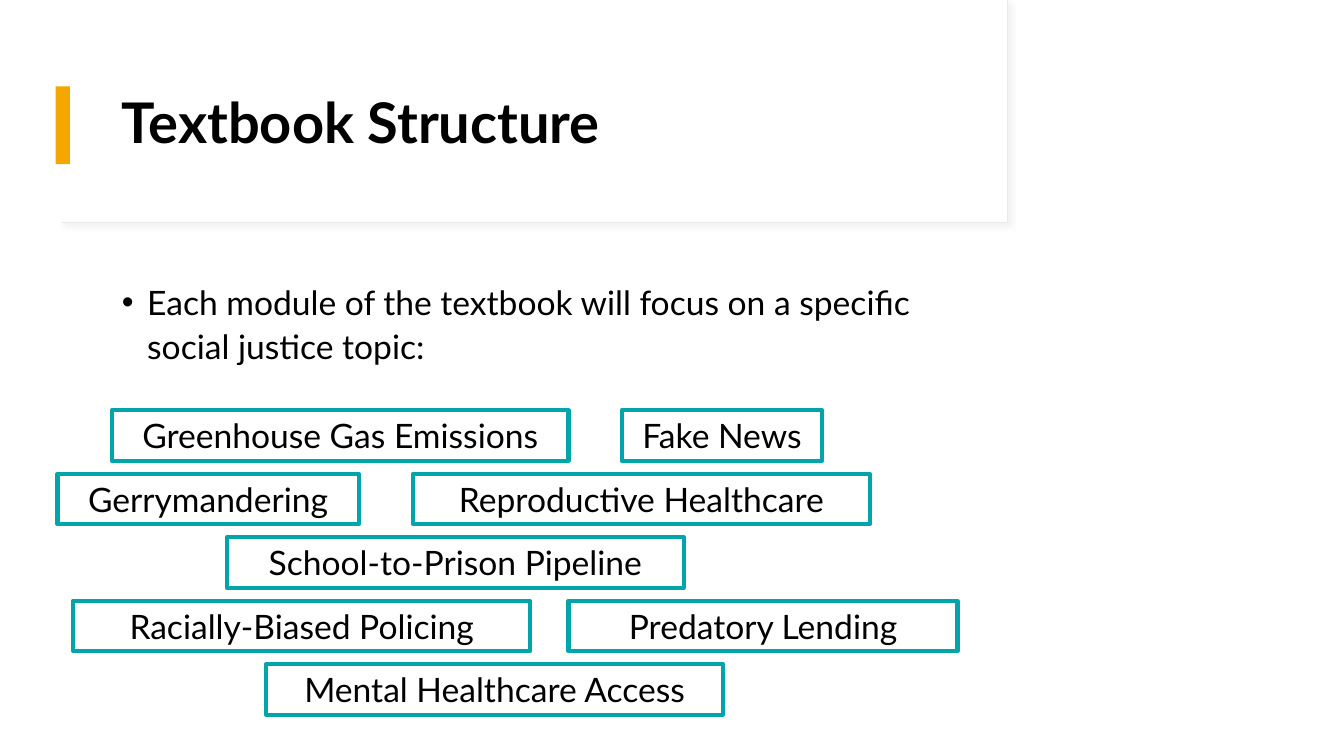
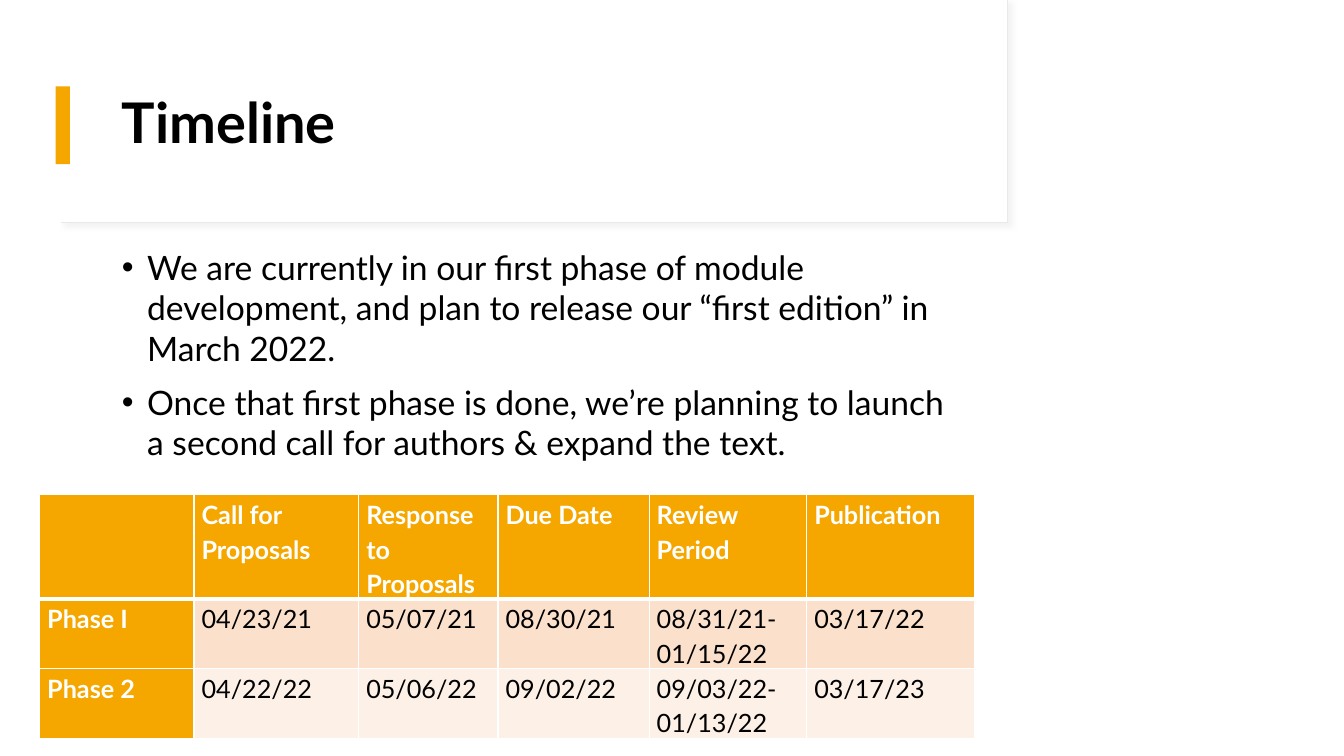
from lxml import etree
from pptx import Presentation
from pptx.dml.color import RGBColor
from pptx.enum.shapes import MSO_SHAPE
from pptx.enum.text import MSO_ANCHOR, PP_ALIGN
from pptx.oxml import parse_xml
from pptx.oxml.ns import nsdecls, qn
from pptx.util import Cm, Pt

FONT = "Lato"
BLACK = RGBColor(0x00, 0x00, 0x00)
WHITE = RGBColor(0xFF, 0xFF, 0xFF)
AMBER = RGBColor(0xF5, 0xA7, 0x00)
TEAL = RGBColor(0x00, 0xA5, 0xAB)
EDGE_GREY = RGBColor(0xE9, 0xE9, 0xE9)
ROW_FILLS = [RGBColor(0xFB, 0xE1, 0xCC), RGBColor(0xFD, 0xF1, 0xE7)]

# Content
STRUCTURE_TITLE = "Textbook Structure"
STRUCTURE_BULLETS = [
    "Each module of the textbook will focus on a specific social justice topic:",
]
WIDE = 11.51
# One list per row: (topic, left, width) in cm
TOPIC_ROWS = [
    [("Greenhouse Gas Emissions", 2.82, WIDE), ("Fake News", 15.67, 5.05)],
    [("Gerrymandering", 1.45, 7.59), ("Reproductive Healthcare", 10.41, WIDE)],
    [("School-to-Prison Pipeline", 5.72, WIDE)],
    [("Racially-Biased Policing", 1.85, WIDE), ("Predatory Lending", 14.33, 9.8)],
    [("Mental Healthcare Access", 6.71, WIDE)],
]
TOPIC_TOP, TOPIC_PITCH, TOPIC_HEIGHT = 10.34, 1.6, 1.27

TIMELINE_TITLE = "Timeline"
TIMELINE_BULLETS = [
    "We are currently in our first phase of module development, and plan to "
    "release our “first edition” in March 2022.",
    "Once that first phase is done, we’re planning to launch a second call "
    "for authors & expand the text.",
]
SCHEDULE = [
    ["", "Call for Proposals", "Response to Proposals", "Due Date",
     "Review Period", "Publication"],
    ["Phase I", "04/23/21", "05/07/21", "08/30/21", "08/31/21-01/15/22", "03/17/22"],
    ["Phase 2", "04/22/22", "05/06/22", "09/02/22", "09/03/22-01/13/22", "03/17/23"],
]
COLUMN_WIDTHS = [3.89, 4.15, 3.51, 3.81, 3.97, 4.22]
ROW_HEIGHTS = [2.63, 1.75, 1.75]


def style_font(font, size, color=BLACK, bold=False):
    font.name = FONT
    font.size = Pt(size)
    font.bold = bold
    font.color.rgb = color


def add_box(slide, left, top, width, height, fill, line=None, line_width=0.75):
    shape = slide.shapes.add_shape(
        MSO_SHAPE.RECTANGLE, Cm(left), Cm(top), Cm(width), Cm(height))
    shape.shadow.inherit = False
    shape.fill.solid()
    shape.fill.fore_color.rgb = fill
    if line is None:
        shape.line.fill.background()
    else:
        shape.line.color.rgb = line
        shape.line.width = Pt(line_width)
    return shape


def add_soft_shadow(shape):
    effects = shape._element.spPr.find(qn("a:effectLst"))
    effects.append(parse_xml(
        f'<a:outerShdw {nsdecls("a")} blurRad="{Pt(4)}" dist="{Pt(3)}" '
        'dir="2700000" algn="tl" rotWithShape="0"><a:srgbClr val="D9D9D9">'
        '<a:alpha val="30000"/></a:srgbClr></a:outerShdw>'))


def add_titled_slide(presentation, title_text):
    slide = presentation.slides.add_slide(presentation.slide_layouts[5])
    # Title band with its edge, and the accent bar
    add_soft_shadow(add_box(slide, 1.55, 0, 23.83, 5.61, WHITE, EDGE_GREY))
    add_box(slide, 1.3, 0, 23.83, 5.59, WHITE)
    add_box(slide, 1.4, 2.18, 0.36, 1.96, AMBER)
    # Title, brought in front of the band
    title = slide.shapes.title
    slide.shapes._spTree.append(title._element)
    title.left, title.top, title.width, title.height = (
        Cm(2.82), Cm(1.52), Cm(21.72), Cm(3.28))
    title.text_frame.text = title_text
    title.text_frame.vertical_anchor = MSO_ANCHOR.MIDDLE
    paragraph = title.text_frame.paragraphs[0]
    paragraph.alignment = PP_ALIGN.LEFT
    paragraph.line_spacing = 0.9
    style_font(paragraph.runs[0].font, 40, bold=True)
    return slide


def add_bullets(slide, bullets, top, height, line_spacing):
    box = slide.shapes.add_textbox(Cm(2.82), Cm(top), Cm(21.72), Cm(height))
    text_frame = box.text_frame
    text_frame.word_wrap = True
    text_frame.text = "\n".join(bullets)
    for index, paragraph in enumerate(text_frame.paragraphs):
        properties = paragraph._p.get_or_add_pPr()
        properties.set("marL", str(Cm(0.64)))
        properties.set("indent", str(-Cm(0.64)))
        etree.SubElement(properties, qn("a:buFont")).set("typeface", "Arial")
        etree.SubElement(properties, qn("a:buChar")).set("char", "•")
        paragraph.line_spacing = line_spacing
        if index:
            paragraph.space_before = Pt(10)
        style_font(paragraph.runs[0].font, 24)


def set_borders(cell, bottom_width):
    properties = cell._tc.get_or_add_tcPr()
    for side, width in (("L", 1), ("R", 1), ("T", 1), ("B", bottom_width)):
        properties.append(parse_xml(
            f'<a:ln{side} {nsdecls("a")} w="{Pt(width)}"><a:solidFill>'
            f'<a:srgbClr val="{WHITE}"/></a:solidFill></a:ln{side}>'))


def add_schedule(slide):
    frame = slide.shapes.add_table(
        len(SCHEDULE), len(COLUMN_WIDTHS), Cm(1), Cm(12.47),
        Cm(sum(COLUMN_WIDTHS)), Cm(sum(ROW_HEIGHTS)))
    table = frame.table
    for column, width in zip(table.columns, COLUMN_WIDTHS):
        column.width = Cm(width)
    for row, height in zip(table.rows, ROW_HEIGHTS):
        row.height = Cm(height)
    for row_index, values in enumerate(SCHEDULE):
        for column_index, value in enumerate(values):
            is_header = row_index == 0 or column_index == 0
            cell = table.cell(row_index, column_index)
            set_borders(cell, 1 if row_index else 3)
            cell.fill.solid()
            cell.fill.fore_color.rgb = AMBER if is_header else ROW_FILLS[row_index - 1]
            cell.margin_left = cell.margin_right = Cm(0.19)
            cell.margin_top = cell.margin_bottom = 0
            cell.text_frame.text = value
            paragraph = cell.text_frame.paragraphs[0]
            paragraph.line_spacing = 1.15
            style_font(paragraph.font, 18, WHITE if is_header else BLACK, is_header)
            for run in paragraph.runs:
                style_font(run.font, 18, WHITE if is_header else BLACK, is_header)


def add_topics(slide):
    for row_index, topics in enumerate(TOPIC_ROWS):
        top = TOPIC_TOP + row_index * TOPIC_PITCH
        for topic, left, width in topics:
            shape = add_box(slide, left, top, width, TOPIC_HEIGHT, WHITE, TEAL, 3)
            shape.text_frame.word_wrap = True
            shape.text_frame.text = topic
            paragraph = shape.text_frame.paragraphs[0]
            paragraph.alignment = PP_ALIGN.CENTER
            style_font(paragraph.runs[0].font, 24)


def main():
    presentation = Presentation()
    presentation.slide_width, presentation.slide_height = Cm(33.87), Cm(19.05)

    # Textbook structure
    slide = add_titled_slide(presentation, STRUCTURE_TITLE)
    add_bullets(slide, STRUCTURE_BULLETS, 6.88, 2.64, 1.1)
    add_topics(slide)

    # Timeline
    slide = add_titled_slide(presentation, TIMELINE_TITLE)
    add_bullets(slide, TIMELINE_BULLETS, 6.1, 5.92, 1.0)
    add_schedule(slide)

    presentation.save("out.pptx")


if __name__ == "__main__":
    main()
